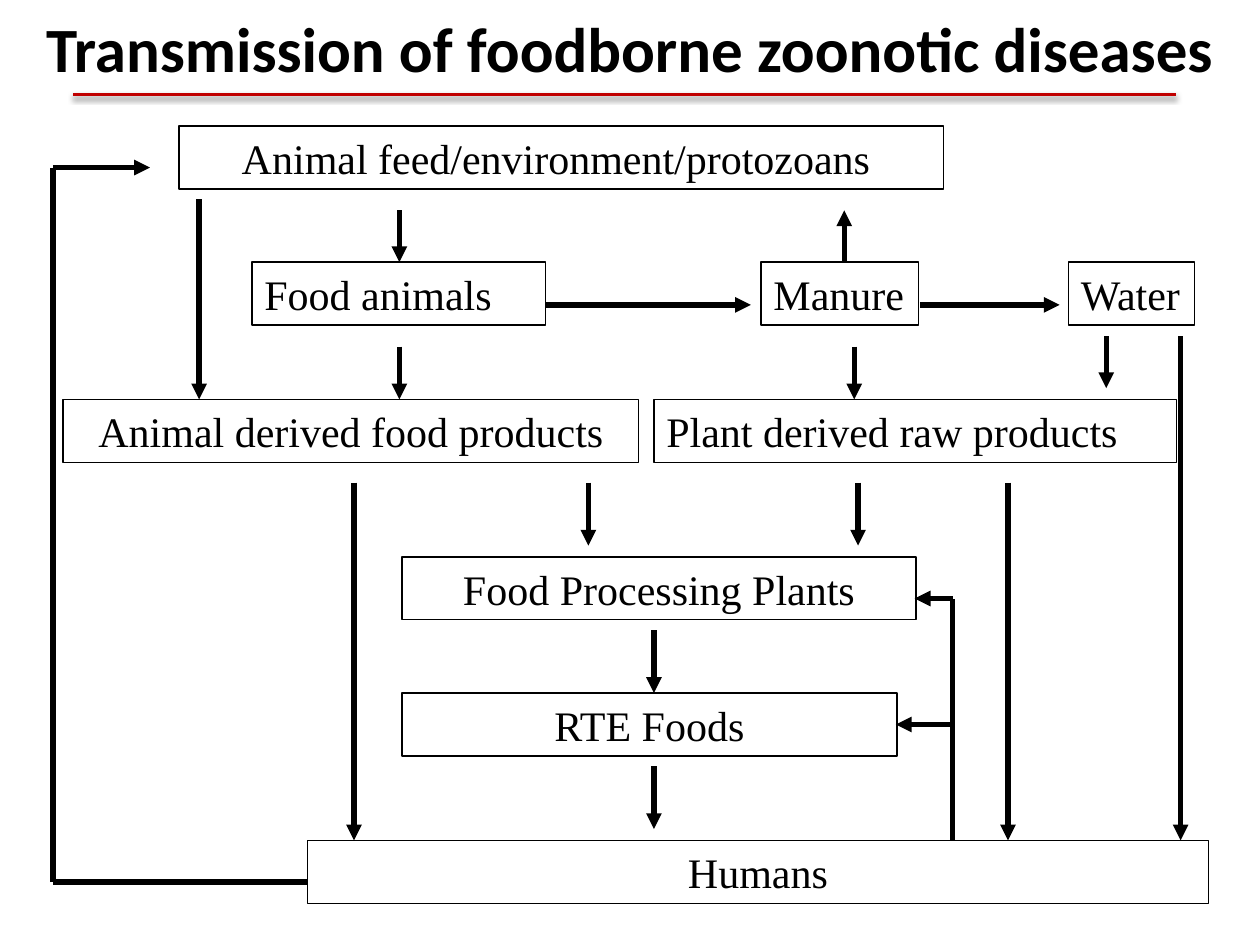
"""Build a flow chart slide on the transmission of foodborne zoonotic diseases."""
from lxml import etree
from pptx import Presentation
from pptx.dml.color import RGBColor
from pptx.enum.shapes import MSO_CONNECTOR
from pptx.enum.text import MSO_ANCHOR, MSO_AUTO_SIZE, PP_ALIGN
from pptx.oxml.ns import qn
from pptx.util import Inches, Pt

LEFT, CENTER = PP_ALIGN.LEFT, PP_ALIGN.CENTER
STRAIGHT = MSO_CONNECTOR.STRAIGHT
MIDDLE = MSO_ANCHOR.MIDDLE
GROW, FIXED = MSO_AUTO_SIZE.SHAPE_TO_FIT_TEXT, MSO_AUTO_SIZE.NONE

BLACK, RED = RGBColor(0, 0, 0), RGBColor(0xC0, 0, 0)
THEME = {
    "title": {"name": "Calibri", "size": Pt(36), "bold": True},
    "label": {"name": "Times New Roman", "size": Pt(24), "bold": False},
    "ink": BLACK,
    "rule": RED,
    "outline": Pt(0.75),
    "arrow": Pt(3),
    "rule_width": Pt(2),
}

TITLE = "Transmission of foodborne zoonotic diseases"
BOX_HEIGHT = 0.5
ROWS = {"source": 1, "farm": 2.08, "product": 3.17, "plant": 4.42, "ready": 5.5, "human": 6.67}

# text, row, left, width, alignment, wrap
BOXES = [
    ("Animal feed/environment/protozoans ", "source", 1.42, 6.07, CENTER, True),
    ("Food animals", "farm", 2, 2.33, LEFT, True),
    ("Manure", "farm", 6.04, 1.25, LEFT, False),
    ("Water", "farm", 8.48, 1, LEFT, False),
    ("Animal derived food products", "product", 0.5, 4.57, CENTER, True),
    ("Plant derived raw products", "product", 5.19, 4.15, LEFT, True),
    ("Food Processing Plants", "plant", 3.19, 4.08, CENTER, True),
    ("RTE Foods", "ready", 3.19, 3.93, CENTER, True),
    ("Humans", "human", 2.44, 7.15, CENTER, True),
]

DOWN_ARROWS = [
    (1.58, 1.58, 3.17), (3.17, 1.67, 2.08), (3.17, 2.75, 3.17), (6.78, 2.75, 3.17),
    (8.78, 2.67, 3.08), (9.37, 2.67, 6.67), (2.81, 3.83, 6.67), (4.67, 3.83, 4.33),
    (6.81, 3.83, 4.33), (8, 3.83, 6.67), (5.19, 5, 5.5), (5.19, 6.08, 6.58),
]
UP_ARROWS = [(6.7, 2.08, 1.67)]
SIDE_ARROWS = [
    (2.42, 4.33, 5.96), (2.42, 7.3, 8.41), (1.33, 0.42, 1.19),
    (4.75, 7.56, 7.26), (5.75, 7.56, 7.11),
]
PLAIN_LINES = [(2.44, 7, 0.42, 7), (0.42, 7, 0.42, 1.33), (7.56, 6.67, 7.56, 4.75)]
RULE = (0.58, 0.75, 9.33, 0.75)


def write(shape, text, style, align, settings):
    frame = shape.text_frame
    for name, value in settings.items():
        setattr(frame, name, value)
    para = frame.paragraphs[0]
    para.alignment = align
    span = para.add_run()
    span.text = text
    for name, value in THEME[style].items():
        setattr(span.font, name, value)
    span.font.color.rgb = THEME["ink"]


def add_box(page, text, row, left, width, align, wrap):
    box = page.shapes.add_textbox(*map(Inches, (left, ROWS[row], width, BOX_HEIGHT)))
    box.line.color.rgb = THEME["ink"]
    box.line.width = THEME["outline"]
    write(box, text, "label", align, {"word_wrap": wrap, "auto_size": GROW})


def add_line(page, ends, color="ink", width="arrow", arrow=False):
    line = page.shapes.add_connector(STRAIGHT, *map(Inches, ends))
    line.line.color.rgb = THEME[color]
    line.line.width = THEME[width]
    if arrow:
        etree.SubElement(line.line._get_or_add_ln(), qn("a:tailEnd"), type="triangle")
    return etree.SubElement(line._element.spPr, qn("a:effectLst"))


def add_rule(page):
    effects = add_line(page, RULE, "rule", "rule_width")
    shadow = etree.SubElement(effects, qn("a:outerShdw"), blurRad=str(Pt(3.1)),
                              dist=str(Pt(1.6)), dir="5400000", rotWithShape="0")
    color = etree.SubElement(shadow, qn("a:srgbClr"), val=str(THEME["ink"]))
    etree.SubElement(color, qn("a:alpha"), val="38000")


def main():
    deck = Presentation()
    deck.slide_width, deck.slide_height = Inches(10), Inches(7.5)
    page = deck.slides.add_slide(deck.slide_layouts[5])
    title = page.shapes.title
    title.left, title.top, title.width, title.height = map(Inches, (0, 0, 10, 0.75))
    write(title, TITLE, "title", CENTER,
          {"vertical_anchor": MIDDLE, "word_wrap": True, "auto_size": FIXED})
    for box in BOXES:
        add_box(page, *box)
    for x, start, end in DOWN_ARROWS + UP_ARROWS:
        add_line(page, (x, start, x, end), arrow=True)
    for y, start, end in SIDE_ARROWS:
        add_line(page, (start, y, end, y), arrow=True)
    for ends in PLAIN_LINES:
        add_line(page, ends)
    add_rule(page)
    deck.save("out.pptx")


if __name__ == "__main__":
    main()
